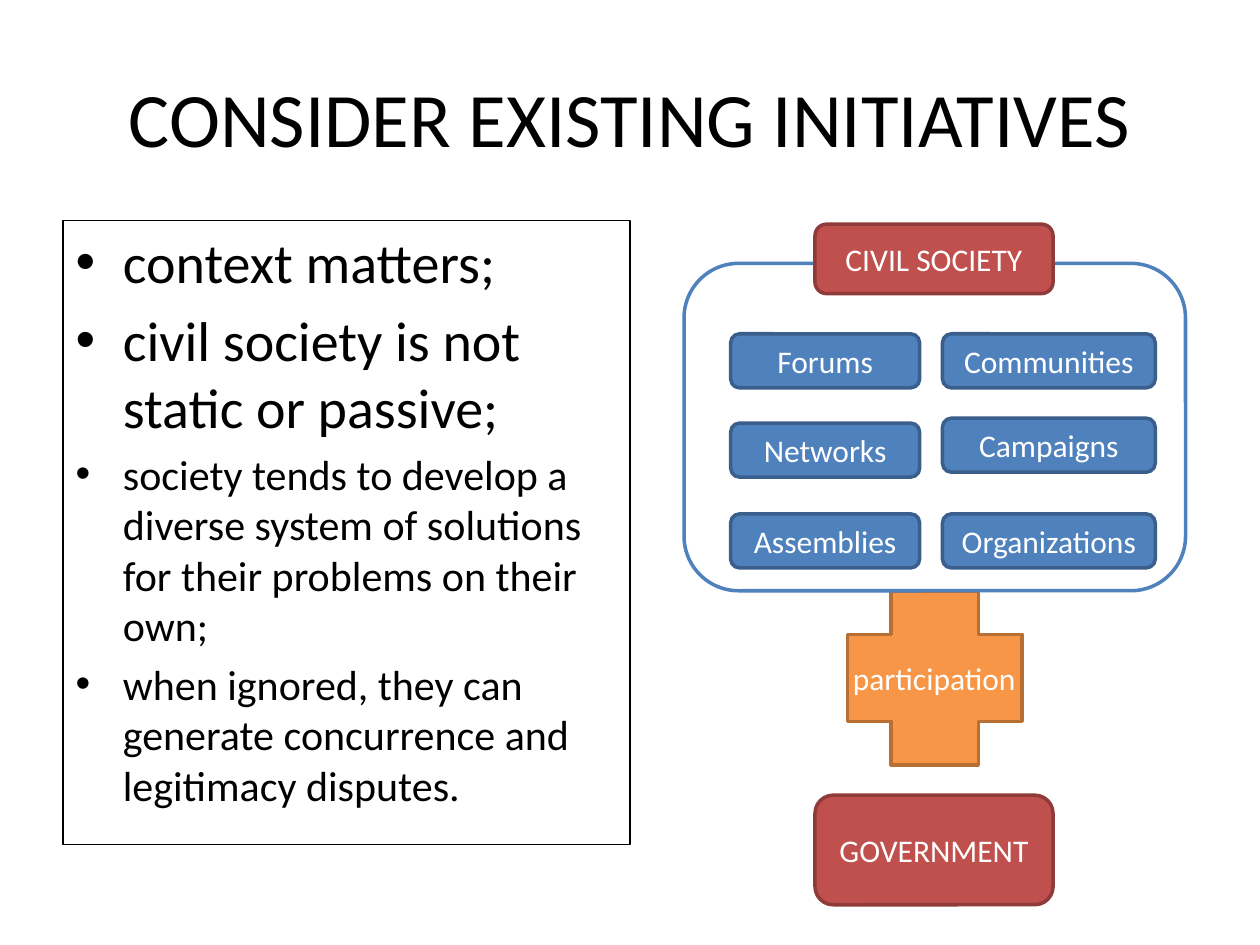
from dataclasses import dataclass
from typing import Optional

from pptx import Presentation
from pptx.dml.color import RGBColor
from pptx.enum.shapes import MSO_SHAPE as Preset
from pptx.enum.text import MSO_ANCHOR as Anchor, MSO_AUTO_SIZE as AutoSize, PP_ALIGN as Align
from pptx.util import Cm, Pt

FONT = "Calibri"
BLACK, WHITE = "000000", "FFFFFF"


@dataclass(frozen=True)
class Style:
    fill: Optional[str]
    line: Optional[str]


@dataclass(frozen=True)
class Box:
    left: float
    top: float
    width: float
    height: float
    style: Style
    label: str = ""
    preset: Preset = Preset.ROUNDED_RECTANGLE


BLUE = Style("4F81BD", "3A5F8C")
RED = Style("C0504D", "8E3B39")
ORANGE = Style("F79646", "B76F34")
OUTLINE = Style(None, "4F81BD")
PLAIN = Style(None, None)


def color(value: str) -> RGBColor:
    return RGBColor.from_string(value)


def format_runs(paragraph, size: float, font_color: str) -> None:
    for run in paragraph.runs:
        run.font.name = FONT
        run.font.size = Pt(size)
        run.font.color.rgb = color(font_color)


def place(shape, left: float, top: float, width: float, height: float) -> None:
    shape.left, shape.top = Cm(left), Cm(top)
    shape.width, shape.height = Cm(width), Cm(height)


def draw_box(slide, box: Box) -> None:
    shape = slide.shapes.add_shape(
        box.preset, Cm(box.left), Cm(box.top), Cm(box.width), Cm(box.height))
    shape.shadow.inherit = False
    if box.style.fill:
        shape.fill.solid()
        shape.fill.fore_color.rgb = color(box.style.fill)
    else:
        shape.fill.background()
    if box.style.line:
        shape.line.color.rgb = color(box.style.line)
        shape.line.width = Pt(2)
    else:
        shape.line.fill.background()
    if box.label:
        text_frame = shape.text_frame
        text_frame.text = box.label
        text_frame.vertical_anchor = Anchor.MIDDLE
        paragraph = text_frame.paragraphs[0]
        paragraph.alignment = Align.CENTER
        format_runs(paragraph, 18, WHITE)


def draw_title(slide, text: str) -> None:
    title = slide.shapes.title
    place(title, 1.27, 0.76, 22.86, 3.18)
    title.text_frame.text = text
    title.text_frame.vertical_anchor = Anchor.MIDDLE
    paragraph = title.text_frame.paragraphs[0]
    paragraph.alignment = Align.CENTER
    format_runs(paragraph, 44, BLACK)


def draw_list(slide, items: list[tuple[str, float]]) -> None:
    body = slide.placeholders[1]
    place(body, 1.27, 4.45, 11.43, 12.57)
    body.line.color.rgb = color(BLACK)
    body.line.width = Pt(0.75)
    text_frame = body.text_frame
    text_frame.text = "\n".join(text for text, _ in items)
    text_frame.auto_size = AutoSize.NONE
    for paragraph, (_, size) in zip(text_frame.paragraphs, items):
        format_runs(paragraph, size, BLACK)


def initiative_boxes() -> list[Box]:
    # Each column: left, width, and (label, top) entries
    columns = [
        (14.73, 3.81, [("Forums", 6.73), ("Networks", 8.53), ("Assemblies", 10.36)]),
        (19.0, 4.29, [("Communities", 6.73), ("Campaigns", 8.43), ("Organizations", 10.36)]),
    ]
    return [Box(left, top, width, 1.09, BLUE, label)
            for left, width, entries in columns for label, top in entries]


def main() -> None:
    presentation = Presentation()
    presentation.slide_width, presentation.slide_height = Cm(25.4), Cm(19.05)
    slide = presentation.slides.add_slide(presentation.slide_layouts[1])

    # Title and bullet list
    draw_title(slide, "CONSIDER EXISTING INITIATIVES")
    draw_list(slide, [
        ("context matters;", 32),
        ("civil society is not static or passive;", 32),
        ("society tends to develop a diverse system of solutions "
         "for their problems on their own;", 24),
        ("when ignored, they can generate concurrence and legitimacy disputes.", 24),
    ])

    # Diagram, from back to front
    diagram = [
        *initiative_boxes(),
        Box(16.43, 16.03, 4.8, 2.21, RED, "GOVERNMENT"),
        Box(17.09, 11.91, 3.51, 3.51, ORANGE, preset=Preset.CROSS),
        Box(16.69, 13.13, 4.29, 1.09, PLAIN, "participation"),
        Box(13.79, 5.31, 10.11, 6.6, OUTLINE),
        Box(16.43, 4.52, 4.8, 1.4, RED, "CIVIL SOCIETY"),
    ]
    for box in diagram:
        draw_box(slide, box)

    presentation.save("out.pptx")


if __name__ == "__main__":
    main()
